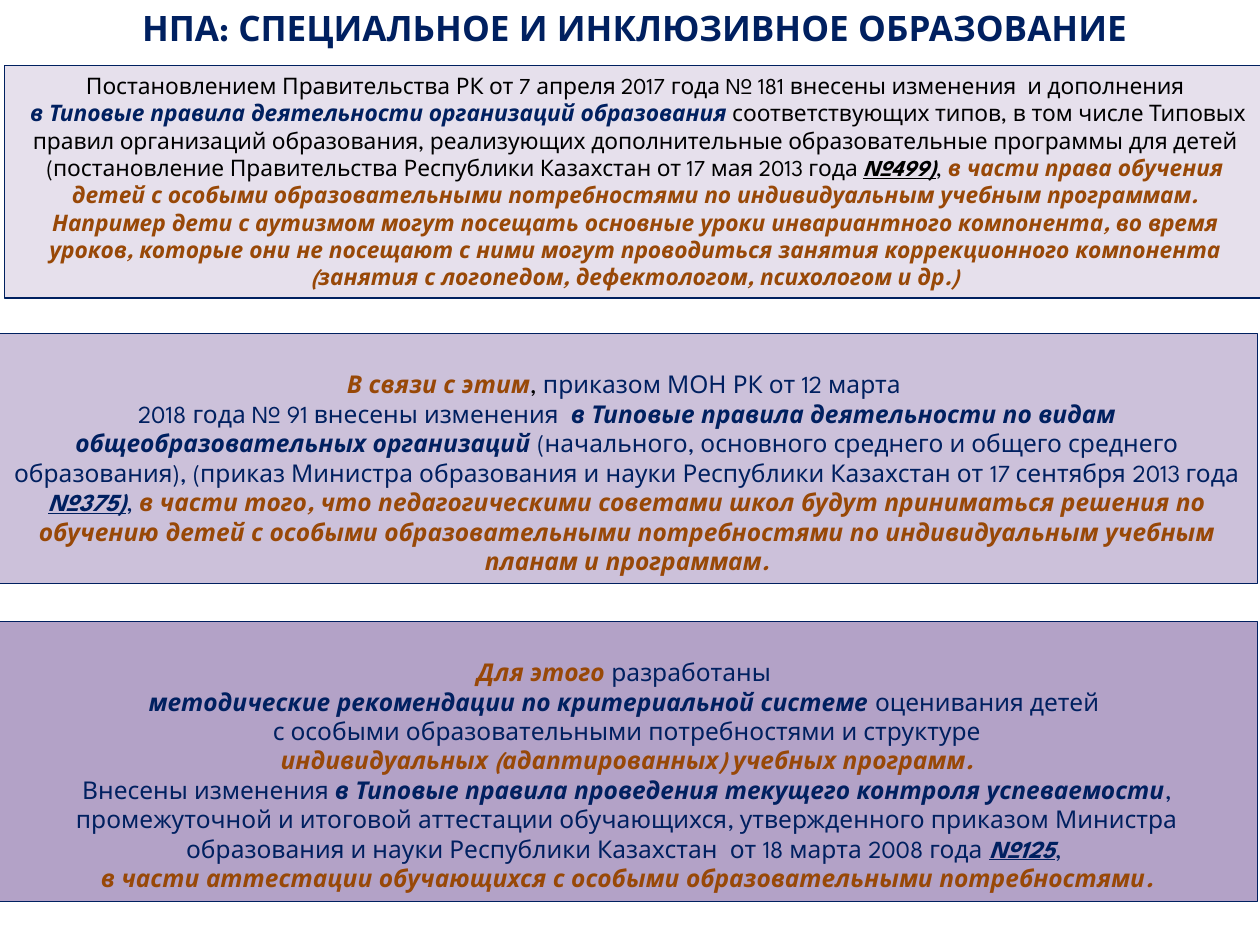
import pptx
import pptx.util
import pptx.dml.color
import pptx.enum.shapes
import pptx.enum.text

Pt = pptx.util.Pt
FONT = "League Spartan"
COLORS = {
    "navy": "002060", "black": "000000", "brown": "984807", "white": "FFFFFF",
    "pale": "E6E0EC", "lilac": "CCC1DA", "violet": "B3A2C7",
}
STYLES = {
    "black": dict(color="black"),
    "navy": dict(color="navy"),
    "title": dict(color="navy", bold=True),
    "rule": dict(color="navy", bold=True, italic=True),
    "accent": dict(color="brown", bold=True, italic=True),
    "black_number": dict(color="black", bold=True, italic=True, underline=True),
    "navy_number": dict(color="navy", bold=True, italic=True, underline=True),
}
TITLE = [[("НПА: СПЕЦИАЛЬНОЕ И ИНКЛЮЗИВНОЕ ОБРАЗОВАНИЕ", "title")]]
DECREE = [
    [("Постановлением Правительства РК от 7 апреля 2017 года № 181 внесены изменения  и дополнения", "black")],
    [
        (" ", "accent"),
        ("в Типовые правила деятельности организаций образования ", "rule"),
        ("соответствующих типов, в том числе Типовых правил организаций образования, "
         "реализующих дополнительные образовательные программы для детей "
         "(постановление Правительства Республики Казахстан от 17 мая 2013 года ", "black"),
        ("№499)", "black_number"),
        (", ", "black"),
        ("в части права обучения детей с особыми образовательными потребностями "
         "по индивидуальным учебным программам.", "accent"),
    ],
    [("Например дети с аутизмом могут посещать основные уроки инвариантного компонента, "
      "во время уроков, которые они не посещают с ними могут проводиться занятия "
      "коррекционного компонента (занятия с логопедом, дефектологом, психологом и др.)", "accent")],
]
ORDER = [[
    ("В связи с этим", "accent"),
    (", ", "black"),
    ("приказом МОН РК от 12 марта \n2018 года № 91 внесены изменения  ", "navy"),
    ("в Типовые правила деятельности по видам общеобразовательных организаций ", "rule"),
    ("(начального, основного среднего и общего среднего образования), "
     "(приказ Министра образования и науки Республики Казахстан от 17 сентября 2013 года ", "navy"),
    ("№375)", "navy_number"),
    (", ", "navy"),
    ("в части того, что педагогическими советами школ будут приниматься решения "
     "по обучению детей с особыми образовательными потребностями "
     "по индивидуальным учебным планам и программам.", "accent"),
]]
METHODS = [
    [("Для этого ", "accent"), ("разработаны ", "navy")],
    [("методические рекомендации по критериальной системе ", "rule"), ("оценивания детей ", "navy")],
    [("с особыми образовательными потребностями и структуре", "navy")],
    [("индивидуальных (адаптированных) учебных программ.", "accent")],
    [
        ("Внесены изменения ", "navy"),
        ("в Типовые правила проведения текущего контроля успеваемости", "rule"),
        (", промежуточной и итоговой аттестации обучающихся, утвержденного приказом Министра "
         "образования и науки Республики Казахстан  от 18 марта 2008 года ", "navy"),
        ("№125", "navy_number"),
        (", ", "navy"),
    ],
    [("в части аттестации обучающихся с особыми образовательными потребностями.", "accent")],
]


def rgb(name):
    """Return the named colour."""
    return pptx.dml.color.RGBColor.from_string(COLORS[name])


def add_text(paragraph, text, size, color, bold=False, italic=False, underline=False):
    """Append formatted text to a paragraph, breaking lines at newlines."""
    for index, line in enumerate(text.split("\n")):
        if index:
            paragraph.add_line_break()
        run = paragraph.add_run()
        run.text = line
        font = run.font
        font.name, font.size, font.color.rgb = FONT, Pt(size), rgb(color)
        font.bold, font.italic, font.underline = bold, italic, underline


def add_panel(slide, box, paragraphs, size, fill, line="navy", top_inset=3.6):
    """Draw a filled rectangle with centred paragraphs in the given box."""
    shape = slide.shapes.add_shape(
        pptx.enum.shapes.MSO_SHAPE.RECTANGLE, *(Pt(length) for length in box))
    shape.shadow.inherit = False
    shape.fill.solid()
    shape.fill.fore_color.rgb = rgb(fill)
    shape.line.color.rgb = rgb(line)
    shape.line.width = Pt(0.75)
    frame = shape.text_frame
    frame.word_wrap = True
    frame.vertical_anchor = pptx.enum.text.MSO_ANCHOR.TOP
    frame.margin_left = frame.margin_right = Pt(7.2)
    frame.margin_top, frame.margin_bottom = Pt(top_inset), Pt(3.6)
    for index, pieces in enumerate(paragraphs):
        paragraph = frame.add_paragraph() if index else frame.paragraphs[0]
        paragraph.alignment = pptx.enum.text.PP_ALIGN.CENTER
        for text, style in pieces:
            add_text(paragraph, text, size, **STYLES[style])


def main():
    """Build the slide and save it."""
    presentation = pptx.Presentation()
    presentation.slide_width, presentation.slide_height = Pt(720), Pt(540)
    slide = presentation.slides.add_slide(presentation.slide_layouts[6])
    add_panel(slide, (2.7, 37.4, 720, 133), DECREE, 13, "pale")
    add_panel(slide, (28, 0, 669, 31.5), TITLE, 20, "white", line="white")
    add_panel(slide, (-2, 190.6, 720.6, 143), ORDER, 14, "lilac", top_inset=20.5)
    add_panel(slide, (-2, 355, 720.6, 160), METHODS, 14, "violet", top_inset=20.5)
    presentation.save("out.pptx")


if __name__ == "__main__":
    main()
